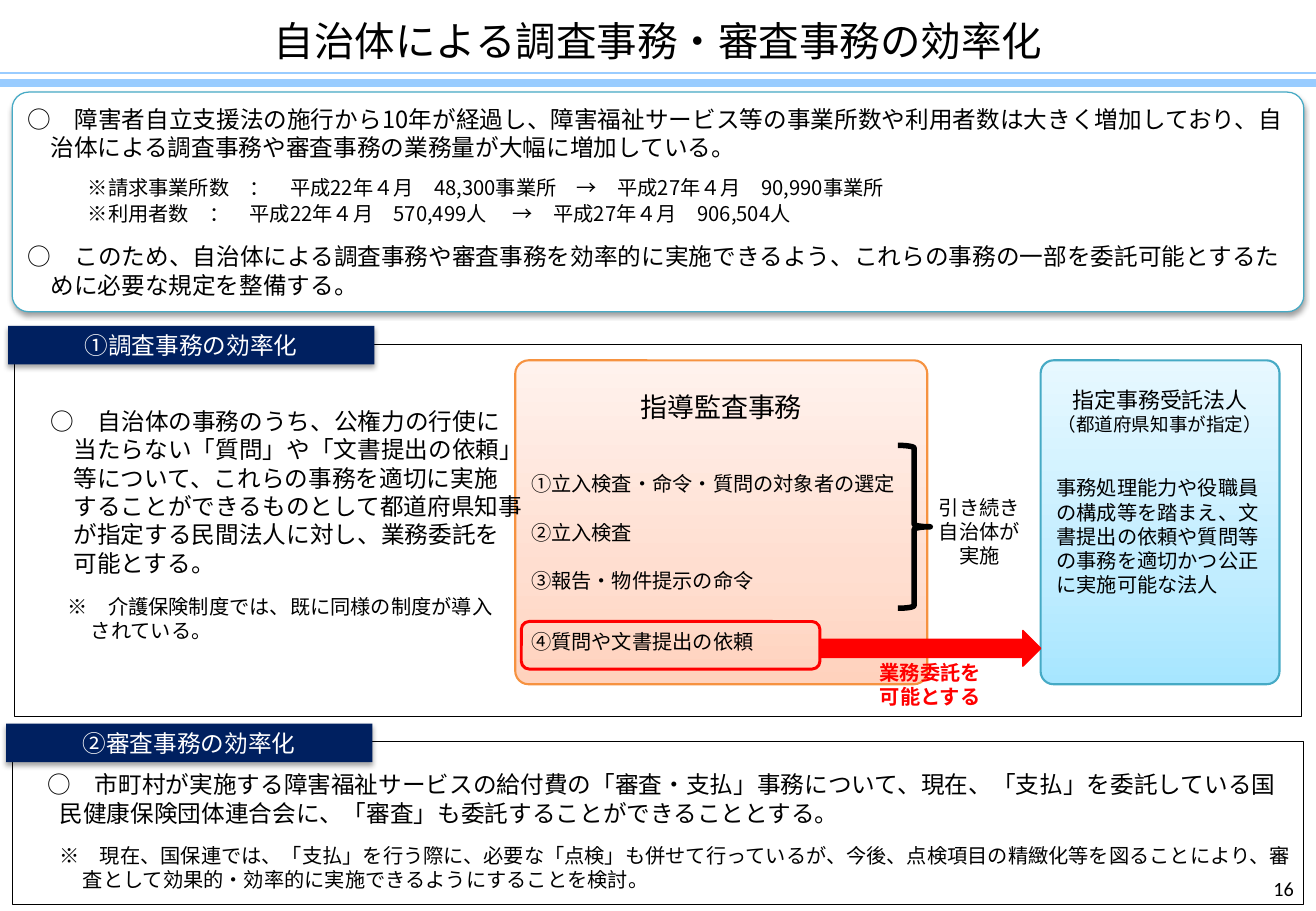
from dataclasses import dataclass

from lxml import etree
from pptx import Presentation
from pptx.dml.color import RGBColor
from pptx.enum.shapes import MSO_CONNECTOR, MSO_SHAPE
from pptx.enum.text import MSO_ANCHOR, MSO_AUTO_SIZE, PP_ALIGN
from pptx.oxml.ns import qn
from pptx.util import Emu, Pt

PX = 7620  # 120 px to the inch
LEFT, CENTER, RIGHT = PP_ALIGN.LEFT, PP_ALIGN.CENTER, PP_ALIGN.RIGHT
TOP, MIDDLE = MSO_ANCHOR.TOP, MSO_ANCHOR.MIDDLE
NO_AUTOFIT = MSO_AUTO_SIZE.NONE
STRAIGHT = MSO_CONNECTOR.STRAIGHT
RECTANGLE, ROUNDED = MSO_SHAPE.RECTANGLE, MSO_SHAPE.ROUNDED_RECTANGLE
BRACE, ARROW = MSO_SHAPE.RIGHT_BRACE, MSO_SHAPE.RIGHT_ARROW


@dataclass(frozen=True)
class Theme:
    font: str = "Noto Sans CJK JP"
    latin: str = "Calibri"
    ink: str = "000000"
    white: str = "FFFFFF"
    rule: str = "99CCFF"
    navy: str = "002060"
    red: str = "FF0000"
    orange: str = "F69240"
    teal: str = "46AAC5"
    orange_stops: tuple = ((0, "FFD2BD"), (35, "FFDED0"), (100, "FFF2ED"))
    blue_stops: tuple = ((0, "A7E6FF"), (35, "C1EDFF"), (100, "E7F8FF"))
    title: int = 24
    heading: int = 16
    subheading: int = 13
    body: int = 14
    note: int = 12
    small: int = 11
    pitch: float = 1.2


THEME = Theme()


def px(value):
    return Emu(value * PX)


def inside(box, left, top, width, height):
    """Turn a place relative to box into a place on the slide."""
    return box[0] + left, box[1] + top, width, height


def set_frame(shape, anchor=TOP, insets=(12, 6, 12, 6), wrap=True):
    frame = shape.text_frame
    frame.auto_size = NO_AUTOFIT
    frame.word_wrap = wrap
    frame.vertical_anchor = anchor
    (frame.margin_left, frame.margin_top,
     frame.margin_right, frame.margin_bottom) = map(px, insets)
    return frame


def write(frame, text, size=THEME.note, color=THEME.ink, font=THEME.font, bold=False,
          align=LEFT, before=0, margin=0, first=0, pitch=THEME.pitch, tabs=()):
    """Add one paragraph; a vertical tab in text is a line break."""
    paragraph = frame.add_paragraph() if frame.text else frame.paragraphs[0]
    paragraph.text = text
    paragraph.alignment = align
    paragraph.line_spacing = Pt(round(size * pitch, 1))
    paragraph.space_before = Pt(before)
    paragraph.space_after = Pt(0)
    properties = paragraph._p.get_or_add_pPr()
    properties.set("marL", str(px(margin)))
    properties.set("indent", str(px(first)))
    if tabs:
        tab_list = etree.SubElement(properties, qn("a:tabLst"))
        for tab in tabs:
            etree.SubElement(tab_list, qn("a:tab"), pos=str(px(tab)), algn="l")
    for run in paragraph.runs:
        run.font.size = Pt(size)
        run.font.bold = bold
        run.font.color.rgb = RGBColor.from_string(color)
        run.font.name = font
        etree.SubElement(run._r.get_or_add_rPr(), qn("a:ea"), typeface=THEME.font)


def add_text_box(slide, box, anchor=MIDDLE):
    return set_frame(slide.shapes.add_textbox(*map(px, box)), anchor)


def set_gradient(shape, stops):
    shape.fill.gradient()
    shape.fill.gradient_angle = 90
    stop_list = shape._element.spPr.find(qn("a:gradFill")).find(qn("a:gsLst"))
    for stop in list(stop_list):
        stop_list.remove(stop)
    for position, color in stops:
        stop = etree.SubElement(stop_list, qn("a:gs"), pos=str(position * 1000))
        etree.SubElement(stop, qn("a:srgbClr"), val=color)


def add_shadow(shape, opacity):
    effects = shape._element.spPr.find(qn("a:effectLst"))
    shadow = etree.SubElement(effects, qn("a:outerShdw"), blurRad=str(Pt(3.1)),
                              dist=str(Pt(1.7)), dir="5400000", rotWithShape="0")
    color = etree.SubElement(shadow, qn("a:srgbClr"), val=THEME.ink)
    etree.SubElement(color, qn("a:alpha"), val=str(opacity * 1000))


def add_shape(slide, kind, box, fill=None, stops=None, line=None, weight=1.0,
              corner=None, shadow=None):
    shape = slide.shapes.add_shape(kind, *map(px, box))
    shape.shadow.inherit = False
    if stops:
        set_gradient(shape, stops)
    elif fill:
        shape.fill.solid()
        shape.fill.fore_color.rgb = RGBColor.from_string(fill)
    else:
        shape.fill.background()
    if line:
        shape.line.color.rgb = RGBColor.from_string(line)
        shape.line.width = Pt(weight)
    else:
        shape.line.fill.background()
    if corner is not None:
        shape.adjustments[0] = corner
    if shadow:
        add_shadow(shape, shadow)
    return shape


def draw_header(slide, box):
    left, top, width, height = box
    title = slide.shapes.title
    title.left, title.top, title.width, title.height = map(px, inside(box, 0, 7, width, 65))
    write(set_frame(title, MIDDLE, wrap=False), "自治体による調査事務・審査事務の効率化",
          size=THEME.title, align=CENTER)
    for offset, weight in ((72, 0.75), (height, 4.5)):
        y = px(top + offset)
        rule = slide.shapes.add_connector(STRAIGHT, px(left), y, px(left + width), y)
        rule.line.color.rgb = RGBColor.from_string(THEME.rule)
        rule.line.width = Pt(weight)
        etree.SubElement(rule._element.spPr, qn("a:effectLst"))


def draw_summary(slide, box):
    panel = add_shape(slide, ROUNDED, box, fill=THEME.white, line=THEME.teal, weight=0.75,
                      corner=0.075, shadow=38)
    frame = set_frame(panel, MIDDLE, (10, 5, 12, 5))
    point = dict(size=THEME.body, margin=23, first=-23)
    figures = dict(first=60, pitch=1.32, tabs=(240, 592))
    write(frame, "○　障害者自立支援法の施行から10年が経過し、障害福祉サービス等の事業所数や利用者数は大きく増加しており、"
          "自治体による調査事務や審査事務の業務量が大幅に増加している。", **point)
    write(frame, "※請求事業所数　：　平成22年４月　48,300事業所　→　平成27年４月　90,990事業所",
          before=6.6, **figures)
    write(frame, "※利用者数\t：　平成22年４月　570,499人\t→　平成27年４月　906,504人", **figures)
    write(frame, "○　このため、自治体による調査事務や審査事務を効率的に実施できるよう、これらの事務の一部を"
          "委託可能とするために必要な規定を整備する。", before=9.6, **point)


def draw_section(slide, box, label, top_inset):
    """Draw a framed section with its label and return the frame's text."""
    panel = add_shape(slide, RECTANGLE, box, line=THEME.ink, weight=0.5)
    tag = add_shape(slide, RECTANGLE, inside(box, -6, -18, 362, 38), fill=THEME.navy, shadow=35)
    write(set_frame(tag, MIDDLE), label, size=THEME.body, color=THEME.white, align=CENTER)
    return set_frame(panel, TOP, (12, top_inset, 12, 6))


def draw_audit_tasks(slide, box):
    panel = add_shape(slide, ROUNDED, box, stops=THEME.orange_stops, line=THEME.orange,
                      weight=1.25, corner=0.041)
    frame = set_frame(panel, TOP, (12, 26, 12, 6))
    write(frame, "指導監査事務", size=THEME.heading, align=CENTER)
    for text, before in (("①立入検査・命令・質問の対象者の選定", 28.8), ("②立入検査", 14.4),
                         ("③報告・物件提示の命令", 14.4), ("④質問や文書提出の依頼", 21.6)):
        write(frame, text, before=before)
    add_shape(slide, BRACE, inside(box, 378, 84, 32, 161), line=THEME.ink, weight=3.25)
    add_shape(slide, ROUNDED, inside(box, 6, 258, 295, 47), line=THEME.red, weight=1.75)


def draw_contractor(slide, box):
    panel = add_shape(slide, ROUNDED, box, stops=THEME.blue_stops, line=THEME.teal,
                      weight=1.25, corner=0.054)
    frame = set_frame(panel, TOP, (12, 22, 12, 6))
    write(frame, "指定事務受託法人", size=THEME.subheading, align=CENTER)
    write(frame, "（都道府県知事が指定）", size=THEME.small, align=CENTER)
    write(frame, "事務処理能力や役職員の構成等を踏まえ、文書提出の依頼や質問等の事務を適切かつ公正に実施可能な法人",
          before=24)


def draw_investigation(slide, box):
    draw_audit_tasks(slide, inside(box, 495, 16, 407, 320))
    draw_contractor(slide, inside(box, 1014, 16, 236, 320))
    add_shape(slide, ARROW, inside(box, 797, 283, 217, 35), fill=THEME.red, line=THEME.red)
    write(add_text_box(slide, inside(box, 834, 308, 142, 56)), "業務委託を\v可能とする",
          color=THEME.red, font=THEME.latin, bold=True, align=CENTER)
    write(add_text_box(slide, inside(box, 900, 147, 107, 76)), "引き続き\v自治体が\v実施",
          align=CENTER)
    write(add_text_box(slide, inside(box, 24, 252, 611, 38)),
          "※　介護保険制度では、既に同様の制度が導入\vされている。", margin=40, first=-23)
    frame = draw_section(slide, box, "①調査事務の効率化", 62)
    write(frame, "○　自治体の事務のうち、公権力の行使に\v当たらない「質問」や「文書提出の依頼」\v"
          "等について、これらの事務を適切に実施\vすることができるものとして都道府県知事\v"
          "が指定する民間法人に対し、業務委託を\v可能とする。",
          size=THEME.body, margin=47, first=-23)


def draw_review(slide, box):
    frame = draw_section(slide, box, "②審査事務の効率化", 28)
    write(frame, "○　市町村が実施する障害福祉サービスの給付費の「審査・支払」事務について、現在、「支払」を"
          "委託している国民健康保険団体連合会に、「審査」も委託することができることとする。",
          size=THEME.body, margin=35, first=-12)
    write(frame, "※　現在、国保連では、「支払」を行う際に、必要な「点検」も併せて行っているが、今後、"
          "点検項目の精緻化等を図ることにより、審査として効果的・効率的に実施できるようにすることを検討。",
          before=9.6, margin=58, first=-23)


def main():
    presentation = Presentation()
    presentation.slide_width, presentation.slide_height = px(1300), px(900)
    slide = presentation.slides.add_slide(presentation.slide_layouts[5])
    draw_header(slide, (0, 0, 1300, 82))
    draw_summary(slide, (12, 91, 1276, 217))
    draw_investigation(slide, (14, 340, 1272, 368))
    draw_review(slide, (12, 733, 1276, 161))
    write(add_text_box(slide, (986, 856, 304, 43)), "16", font=THEME.latin, align=RIGHT)
    presentation.save("out.pptx")


if __name__ == "__main__":
    main()
